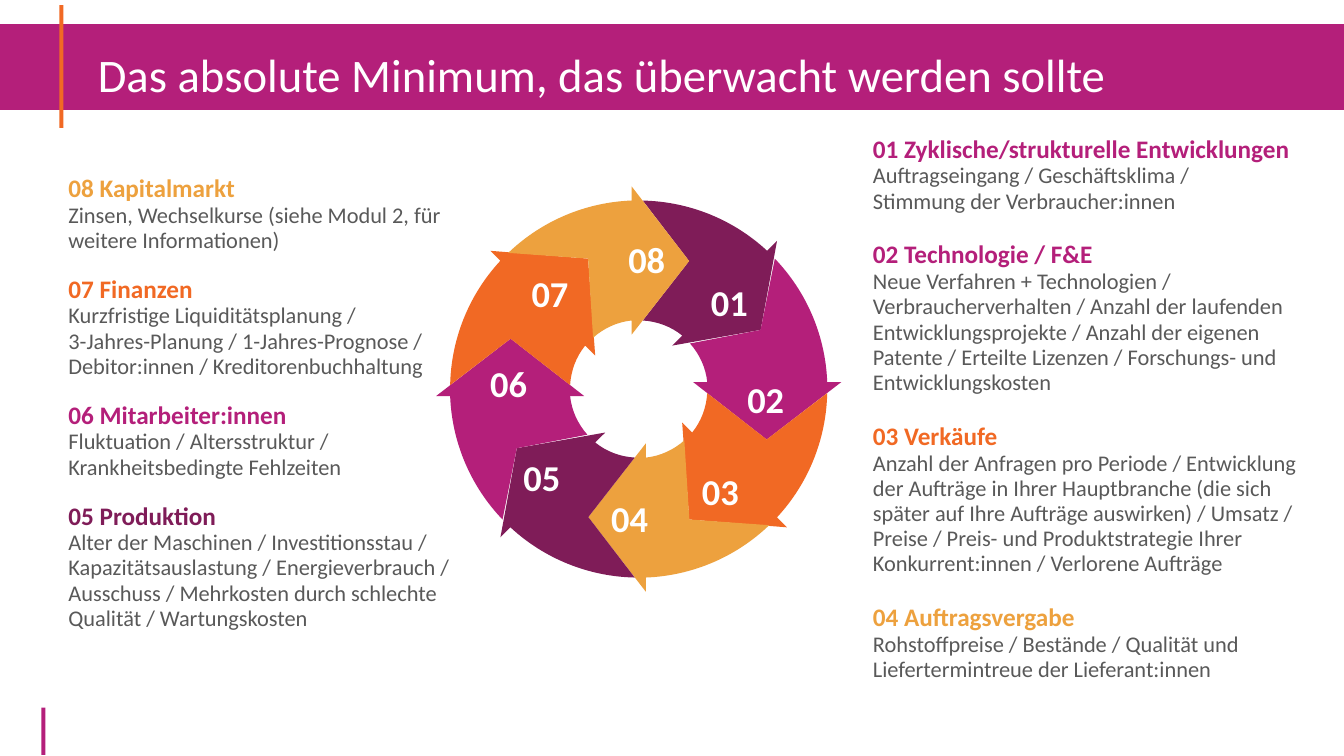
from math import atan2, cos, hypot, radians, sin, tan

from lxml.etree import SubElement
from pptx import Presentation
from pptx.dml.color import RGBColor
from pptx.enum.shapes import MSO_SHAPE
from pptx.enum.text import MSO_ANCHOR, MSO_AUTO_SIZE, PP_ALIGN
from pptx.oxml.ns import qn
from pptx.util import Inches, Pt

TITLE = "Das absolute Minimum, das überwacht werden sollte"

RIGHT_TOPICS = [
    ("01 Zyklische/strukturelle Entwicklungen", "magenta", [
        "Auftragseingang / Geschäftsklima /",
        "Stimmung der Verbraucher:innen"]),
    ("02 Technologie / F&E", "magenta", [
        "Neue Verfahren + Technologien / Verbraucherverhalten / Anzahl der laufenden "
        "Entwicklungsprojekte / Anzahl der eigenen Patente / Erteilte Lizenzen / "
        "Forschungs- und Entwicklungskosten"]),
    ("03 Verkäufe", "orange", [
        "Anzahl der Anfragen pro Periode / Entwicklung der Aufträge in Ihrer Hauptbranche "
        "(die sich später auf Ihre Aufträge auswirken) / Umsatz / Preise / Preis- und "
        "Produktstrategie Ihrer Konkurrent:innen / Verlorene Aufträge"]),
    ("04 Auftragsvergabe", "amber", [
        "Rohstoffpreise / Bestände / Qualität und Liefertermintreue der Lieferant:innen"]),
]
LEFT_TOPICS = [
    ("08 Kapitalmarkt", "amber", [
        "Zinsen, Wechselkurse (siehe Modul 2, für weitere Informationen)"]),
    ("07 Finanzen", "orange", [
        "Kurzfristige Liquiditätsplanung /",
        "3-Jahres-Planung / 1-Jahres-Prognose / \nDebitor:innen / Kreditorenbuchhaltung"]),
    ("06 Mitarbeiter:innen", "magenta", [
        "Fluktuation / Altersstruktur /",
        "Krankheitsbedingte Fehlzeiten"]),
    ("05 Produktion", "plum", [
        "Alter der Maschinen / Investitionsstau / Kapazitätsauslastung / Energieverbrauch / "
        "Ausschuss / Mehrkosten durch schlechte",
        "Qualität / Wartungskosten"]),
]
COLUMNS = [
    (RIGHT_TOPICS, (8.56, 1.32, 4.53, 6.17), 21.6),
    (LEFT_TOPICS, (0.58, 1.71, 4.01, 4.9), 18),
]
ARROWS = [
    ("01", "plum", (6.95, 2.73)),
    ("02", "magenta", (7.31, 3.69)),
    ("03", "orange", (6.86, 4.6)),
    ("04", "amber", (5.96, 4.87)),
    ("05", "plum", (5.09, 4.46)),
    ("06", "magenta", (4.76, 3.53)),
    ("07", "orange", (5.17, 2.64)),
    ("08", "amber", (6.13, 2.3)),
]
BAND = (0, 0.24, 13.33, 0.85)
ACCENTS = [((0.59, 0.05, 0.04, 1.22), "orange"), ((0.41, 7.02, 0.04, 0.47), "magenta")]
THEME = {
    "font": "Calibri",
    "colors": {"magenta": "B41F7A", "orange": "F16924", "amber": "EDA13E",
               "plum": "7F1C58", "gray": "595959", "white": "FFFFFF"},
    "sizes": {"title": 33.3, "number": 26, "heading": 18, "body": 16},
}
RING_CENTER = (6.335, 3.86)
OUTER_RADIUS, INNER_RADIUS = 1.87, 0.68
HEAD_X, TAIL_X = -0.07, 0.04
HEAD_OUTER, HEAD_INNER = (HEAD_X, -2.01), (HEAD_X, -0.54)
TIP_Y, TIP_REACHES = -1.27, [0.5, 0.44, 0.5, 0.56]
CURVE_STARTS = (0, 7)


def color(name):
    return RGBColor.from_string(THEME["colors"][name])


def write(paragraph, text, *, size, tint, bold=False, align=PP_ALIGN.LEFT,
          leading=None, before=0):
    paragraph.alignment = align
    paragraph.line_spacing = leading
    paragraph.space_before = Pt(before)
    for index, line in enumerate(text.split("\n")):
        if index:
            paragraph.add_line_break()
        run = paragraph.add_run()
        run.text = line
        run.font.name = THEME["font"]
        run.font.size = Pt(THEME["sizes"][size])
        run.font.bold = bold
        run.font.color.rgb = color(tint)


def paint(shape, tint):
    shape.shadow.inherit = False
    shape.fill.solid()
    shape.fill.fore_color.rgb = color(tint)
    shape.line.fill.background()


def add_bar(slide, box, tint):
    bar = slide.shapes.add_shape(MSO_SHAPE.RECTANGLE, *map(Inches, box))
    paint(bar, tint)
    return bar


def rotate(point, degrees):
    x, y = point
    turn = radians(degrees)
    return x * cos(turn) - y * sin(turn), x * sin(turn) + y * cos(turn)


def arc(start, end):
    sweep = atan2(end[1], end[0]) - atan2(start[1], start[0])
    pull = 4 / 3 * tan(sweep / 4)
    return [start, (start[0] - pull * start[1], start[1] + pull * start[0]),
            (end[0] + pull * end[1], end[1] - pull * end[0]), end]


def arrow_outline(position, step):
    tip, notch = [(TIP_REACHES[place % 4], TIP_Y) for place in (position, position - 1)]
    outer = arc(rotate((TAIL_X, -OUTER_RADIUS), -step), (HEAD_X, -OUTER_RADIUS))
    inner = arc((HEAD_X, -INNER_RADIUS), rotate((TAIL_X, -INNER_RADIUS), -step))
    outline = outer + [HEAD_OUTER, tip, HEAD_INNER] + inner + [rotate(notch, -step)]
    return [rotate(point, position * step) for point in outline]


def bend(shape):
    segments = list(shape.element.iter(qn("a:lnTo")))
    for start in CURVE_STARTS:
        controls = segments[start:start + 3]
        curve = SubElement(controls[0].getparent(), qn("a:cubicBezTo"))
        controls[0].addprevious(curve)
        for control in controls:
            curve.append(control[0])
            control.getparent().remove(control)


def add_ring(slide):
    step = 360 / len(ARROWS)
    for position, (_, tint, _) in enumerate(ARROWS, 1):
        points = [(Inches(RING_CENTER[0] + x), Inches(RING_CENTER[1] + y))
                  for x, y in arrow_outline(position, step)]
        builder = slide.shapes.build_freeform(*points[0], scale=1.0)
        builder.add_line_segments(points[1:], close=True)
        arrow = builder.convert_to_shape()
        bend(arrow)
        paint(arrow, tint)
    for number, _, corner in ARROWS:
        label = slide.shapes.add_textbox(*map(Inches, (*corner, 0.57, 0.54))).text_frame
        label.word_wrap = False
        label.vertical_anchor = MSO_ANCHOR.MIDDLE
        write(label.paragraphs[0], number, size="number", tint="white", bold=True,
              align=PP_ALIGN.CENTER)


def add_column(slide, topics, box, gap):
    column = slide.shapes.add_textbox(*map(Inches, box)).text_frame
    column.word_wrap = True
    for index, (heading, tint, details) in enumerate(topics):
        paragraph = column.add_paragraph() if index else column.paragraphs[0]
        write(paragraph, heading, size="heading", tint=tint, bold=True,
              leading=Pt(18), before=gap if index else 0)
        for detail in details:
            write(column.add_paragraph(), detail, size="body", tint="gray", leading=Pt(18))


def add_title(slide):
    title = slide.shapes.title
    title.left, title.top, title.width, title.height = map(Inches, (0.87, 0.47, 10.97, 1.01))
    title.text_frame.vertical_anchor = MSO_ANCHOR.TOP
    title.text_frame.auto_size = MSO_AUTO_SIZE.NONE
    title.text_frame.word_wrap = True
    write(title.text_frame.paragraphs[0], TITLE, size="title", tint="white", leading=0.9)
    title.element.addprevious(add_bar(slide, BAND, "magenta").element)


def main():
    deck = Presentation()
    deck.slide_width, deck.slide_height = Inches(13.33), Inches(7.5)
    slide = deck.slides.add_slide(deck.slide_layouts[5])
    add_title(slide)
    for box, tint in ACCENTS:
        add_bar(slide, box, tint)
    add_ring(slide)
    for topics, box, gap in COLUMNS:
        add_column(slide, topics, box, gap)
    deck.save("out.pptx")


if __name__ == "__main__":
    main()
